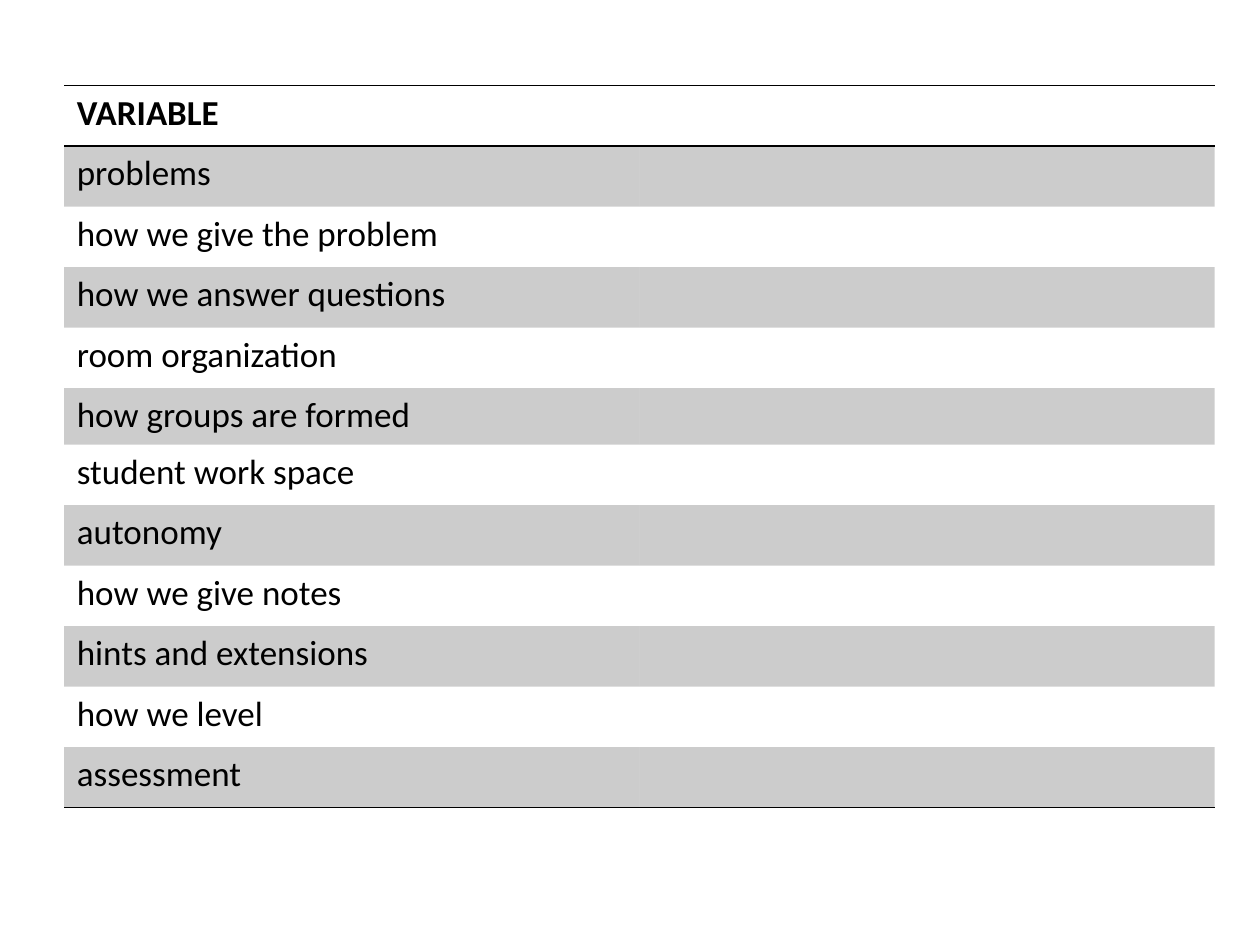
from lxml import etree
from pptx import Presentation
from pptx.dml.color import RGBColor
from pptx.oxml.ns import qn
from pptx.util import Inches, Pt

BLACK = "000000"
FONT = "Calibri"
PLAIN = "{2D5ABB26-0587-4C30-8999-92F81FD0307C}"  # no style, no grid
ROWS = [
    "VARIABLE",
    "problems",
    "how we give the problem",
    "how we answer questions",
    "room organization",
    "how groups are formed",
    "student work space",
    "autonomy",
    "how we give notes",
    "hints and extensions",
    "how we level",
    "assessment",
]
TALL, SHORT = 0.48, 0.45
SLIM = 5  # index of the one lower row


def color(code):
    return RGBColor.from_string(code)


def add_text(cell, text, bold):
    run = cell.text_frame.paragraphs[0].add_run()
    run.text = text
    font = run.font
    font.name, font.size, font.bold = FONT, Pt(20), bold
    font.color.rgb = color(BLACK)


def shade(cell, alpha):
    """Fill a cell with see-through black."""
    cell.fill.solid()
    cell.fill.fore_color.rgb = color(BLACK)
    tone = cell._tc.tcPr.find(".//" + qn("a:srgbClr"))
    etree.SubElement(tone, qn("a:alpha"), val=str(alpha * 1000))


def rule(cell, sides):
    """Draw one-point lines on the named sides, placed before the fill."""
    props = cell._tc.get_or_add_tcPr()
    for spot, side in enumerate(sides):
        line = etree.Element(qn("a:ln" + side), w=str(Pt(1)))
        fill = etree.SubElement(line, qn("a:solidFill"))
        etree.SubElement(fill, qn("a:srgbClr"), val=BLACK)
        props.insert(spot, line)


def add_grid(slide):
    last = len(ROWS) - 1
    high = TALL * last + SHORT
    frame = slide.shapes.add_table(
        len(ROWS), 2, Inches(0.51), Inches(0.68), Inches(9.13), Inches(high))
    table = frame.table
    table._tbl.tblPr.find(qn("a:tableStyleId")).text = PLAIN

    for i, text in enumerate(ROWS):
        table.rows[i].height = Inches(SHORT if i == SLIM else TALL)
        add_text(table.cell(i, 0), text, bold=i == 0)
        for cell in table.rows[i].cells:
            # Odd rows are banded
            if i % 2:
                shade(cell, 20)
            # Lines around the header and under the last row
            if i == 0:
                rule(cell, "TB")
            elif i == last:
                rule(cell, "B")


def main():
    deck = Presentation()
    deck.slide_width, deck.slide_height = Inches(10), Inches(7.5)
    slide = deck.slides.add_slide(deck.slide_layouts[6])
    add_grid(slide)
    deck.save("out.pptx")


if __name__ == "__main__":
    main()
